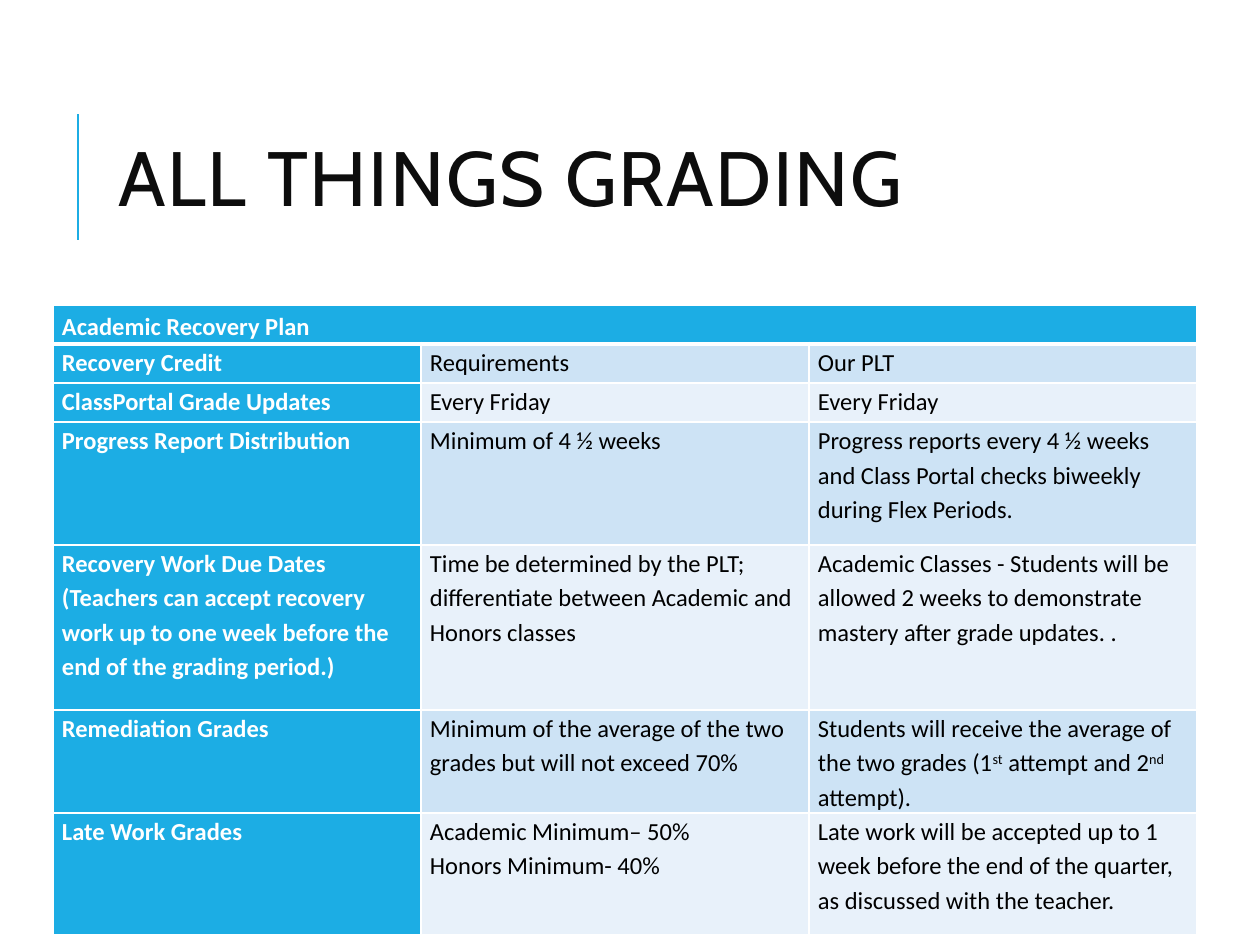
from lxml import etree
from pptx import Presentation
from pptx.dml.color import RGBColor
from pptx.enum.shapes import MSO_CONNECTOR
from pptx.enum.text import MSO_ANCHOR
from pptx.oxml.ns import qn
from pptx.util import Emu, Pt

PX_PER_INCH = 126
STRAIGHT = MSO_CONNECTOR.STRAIGHT
MIDDLE, TOP = MSO_ANCHOR.MIDDLE, MSO_ANCHOR.TOP

ACCENT = RGBColor(0x1C, 0xAD, 0xE4)
BAND_DARK = RGBColor(0xCD, 0xE3, 0xF5)
BAND_LIGHT = RGBColor(0xE8, 0xF1, 0xFA)
TITLE_INK = RGBColor(0x0D, 0x0D, 0x0D)
BLACK = RGBColor(0, 0, 0)
WHITE = RGBColor(0xFF, 0xFF, 0xFF)

COLUMN_WIDTHS = [368, 388, 388]
ROW_HEIGHTS = [39, 39, 39, 123, 165, 103, 122]
# Text between carets is superscript; a line break starts a new paragraph.
GRADING_ROWS = [
    ["Academic Recovery Plan", "", ""],
    ["Recovery Credit", "Requirements", "Our PLT"],
    ["ClassPortal Grade Updates", "Every Friday", "Every Friday"],
    ["Progress Report Distribution", "Minimum of 4 ½ weeks",
     "Progress reports every 4 ½ weeks and Class Portal checks biweekly during Flex Periods."],
    ["Recovery Work Due Dates\n(Teachers can accept recovery work up to one week "
     "before the end of the grading period.)",
     "Time be determined by the PLT; differentiate between Academic and Honors classes",
     "Academic Classes - Students will be allowed 2 weeks to demonstrate mastery "
     "after grade updates. ."],
    ["Remediation Grades",
     "Minimum of the average of the two grades but will not exceed 70%",
     "Students will receive the average of the two grades (1^st^ attempt and 2^nd^ attempt)."],
    ["Late Work Grades", "Academic Minimum– 50%\nHonors Minimum- 40%",
     "Late work will be accepted up to 1 week before the end of the quarter, "
     "as discussed with the teacher."],
]


def px(length):
    return Emu(round(length * 914400 / PX_PER_INCH))


class SlideBuilder:
    title_font = "Cabin"
    table_font = "Calibri"

    def __init__(self, slide):
        self.slide = slide

    def title(self, text, left, top, width, height):
        box = self.slide.shapes.add_textbox(px(left), px(top), px(width), px(height))
        frame = box.text_frame
        frame.text = text
        frame.word_wrap = True
        frame.vertical_anchor = MIDDLE
        paragraph = frame.paragraphs[0]
        paragraph.line_spacing = 0.8
        run = paragraph.runs[0]
        self.format_run(run, self.title_font, 44, TITLE_INK)
        run.font._element.set("spc", "100")

    def line(self, x1, y1, x2, y2, color, points):
        connector = self.slide.shapes.add_connector(STRAIGHT, px(x1), px(y1), px(x2), px(y2))
        connector.line.color.rgb = color
        connector.line.width = Pt(points)
        etree.SubElement(connector._element.spPr, qn("a:effectLst"))

    def table(self, rows, left, top, widths, heights):
        """Add a table with a merged header row, a header column and banded rows."""
        table = self.slide.shapes.add_table(
            len(rows), len(widths), px(left), px(top),
            px(sum(widths)), px(sum(heights))).table
        for column, width in zip(table.columns, widths):
            column.width = px(width)
        for row, height in zip(table.rows, heights):
            row.height = px(height)
        table.cell(0, 0).merge(table.cell(0, len(widths) - 1))
        for i, texts in enumerate(rows):
            for j, text in enumerate(texts):
                is_header = i == 0 or j == 0
                band = BAND_DARK if i % 2 else BAND_LIGHT
                cell = table.cell(i, j)
                self.borders(cell, top=3 if i == 1 else 1, bottom=3 if i == 0 else 1)
                cell.fill.solid()
                cell.fill.fore_color.rgb = ACCENT if is_header else band
                self.cell_text(cell, text, is_header)
                cell.vertical_anchor = MIDDLE if i == 0 else TOP

    def cell_text(self, cell, text, is_header):
        cell.margin_left = cell.margin_right = px(9)
        cell.margin_top = cell.margin_bottom = 0
        frame = cell.text_frame
        for number, line in enumerate(text.split("\n")):
            paragraph = frame.add_paragraph() if number else frame.paragraphs[0]
            paragraph.line_spacing = 1.15
            for piece_number, piece in enumerate(line.split("^")):
                run = paragraph.add_run()
                run.text = piece
                self.format_run(run, self.table_font, 14,
                                WHITE if is_header else BLACK, is_header)
                if piece_number % 2:
                    run.font._element.set("baseline", "30000")

    def borders(self, cell, top, bottom):
        properties = cell._tc.get_or_add_tcPr()
        for side, points in (("L", 1), ("R", 1), ("T", top), ("B", bottom)):
            border = etree.SubElement(properties, qn(f"a:ln{side}"), w=str(Pt(points)))
            fill = etree.SubElement(border, qn("a:solidFill"))
            etree.SubElement(fill, qn("a:srgbClr"), val=str(WHITE))

    def format_run(self, run, font_name, size, color, bold=False):
        run.font.name = font_name
        run.font.size = Pt(size)
        run.font.color.rgb = color
        run.font.bold = bold


def main():
    presentation = Presentation()
    presentation.slide_width = px(1260)
    presentation.slide_height = px(945)
    builder = SlideBuilder(presentation.slides.add_slide(presentation.slide_layouts[6]))
    builder.line(78, 240, 78, 114, ACCENT, 1.5)
    builder.title("ALL THINGS GRADING", 106, 81, 1004, 207)
    builder.table(GRADING_ROWS, 53, 305, COLUMN_WIDTHS, ROW_HEIGHTS)
    presentation.save("out.pptx")


if __name__ == "__main__":
    main()
